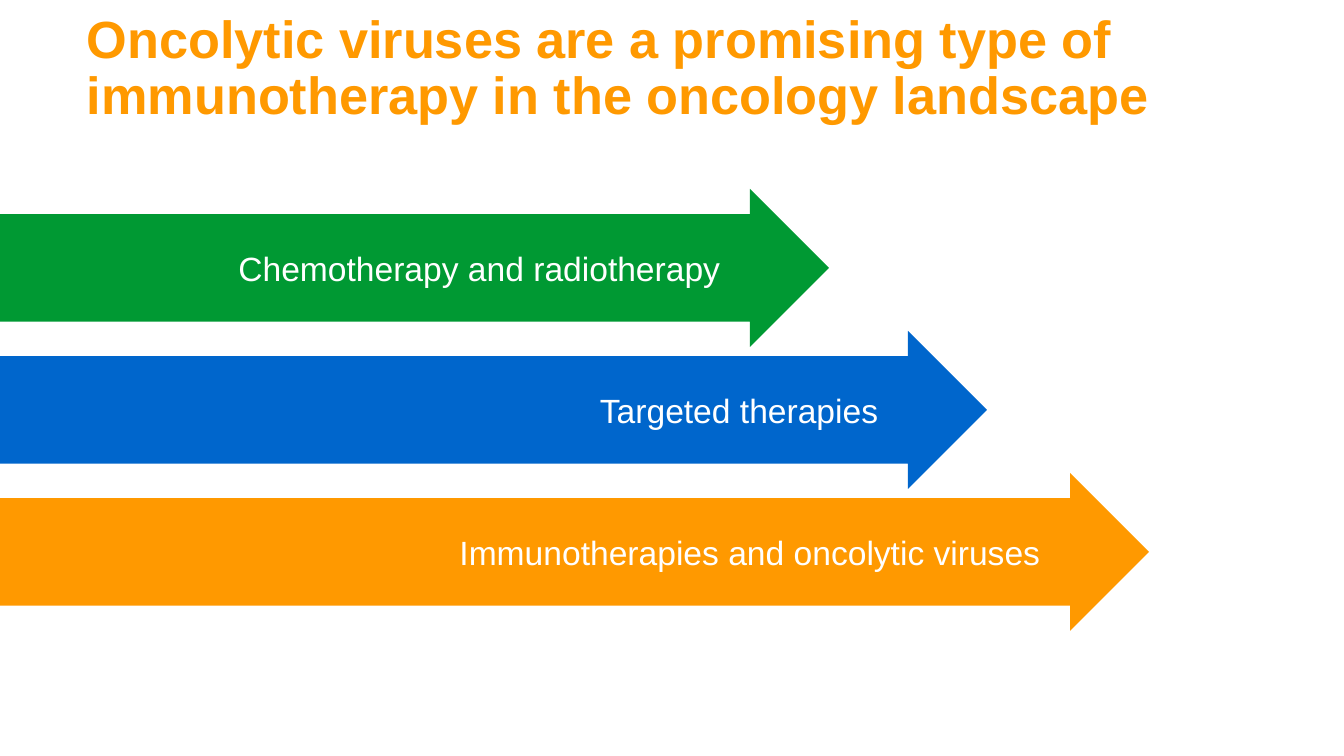
from pptx import Presentation
from pptx.dml.color import RGBColor
from pptx.enum.shapes import MSO_SHAPE
from pptx.enum.text import MSO_ANCHOR, MSO_AUTO_SIZE, PP_ALIGN
from pptx.util import Pt

RIGHT_ARROW = MSO_SHAPE.RIGHT_ARROW
BOTTOM, MIDDLE = MSO_ANCHOR.BOTTOM, MSO_ANCHOR.MIDDLE
LEFT, RIGHT = PP_ALIGN.LEFT, PP_ALIGN.RIGHT
NO_AUTOFIT = MSO_AUTO_SIZE.NONE
EMU_PER_PX = 914400 / 134.4
ORANGE = "FF9900"


def px(length):
    return round(length * EMU_PER_PX)


def write(shape, text, size, color, align, anchor, insets):
    """Fill a shape with one Arial paragraph; insets are left, top, right, bottom in px."""
    frame = shape.text_frame
    frame.word_wrap = True
    frame.auto_size = NO_AUTOFIT
    frame.vertical_anchor = anchor
    (frame.margin_left, frame.margin_top,
     frame.margin_right, frame.margin_bottom) = map(px, insets)
    para = frame.paragraphs[0]
    para.text = text
    para.alignment = align
    para.font.name = "Arial"
    para.font.size = Pt(size)
    para.font.color.rgb = RGBColor.from_string(color)
    return para


deck = Presentation()
deck.slide_width, deck.slide_height = px(1344), px(756)
page = deck.slides.add_slide(deck.slide_layouts[5])

title = page.shapes.title
title.left, title.top, title.width, title.height = px(87), px(40), px(1198), px(86)
heading = write(
    title, "Oncolytic viruses are a promising type of immunotherapy in the oncology landscape",
    28, ORANGE, LEFT, BOTTOM, (0, 0, 0, 0))
heading.font.bold = True
heading.line_spacing = 0.9

therapies = [
    ("Chemotherapy and radiotherapy", 829, "009933"),
    ("Targeted therapies", 987, "0066CC"),
    ("Immunotherapies and oncolytic viruses", 1149, ORANGE),
]
for row, (label, width, color) in enumerate(therapies):
    arrow = page.shapes.add_shape(
        RIGHT_ARROW, 0, px(189 + 142 * row), px(width), px(158))
    arrow.adjustments[0] = 0.68
    arrow.adjustments[1] = 0.5
    arrow.shadow.inherit = False
    arrow.fill.solid()
    arrow.fill.fore_color.rgb = RGBColor.from_string(color)
    arrow.line.fill.background()
    # The wide right inset ends each label where the arrowhead begins.
    write(arrow, label, 18, "FFFFFF", RIGHT, MIDDLE, (7, 7, 55, 7))

deck.save("out.pptx")
